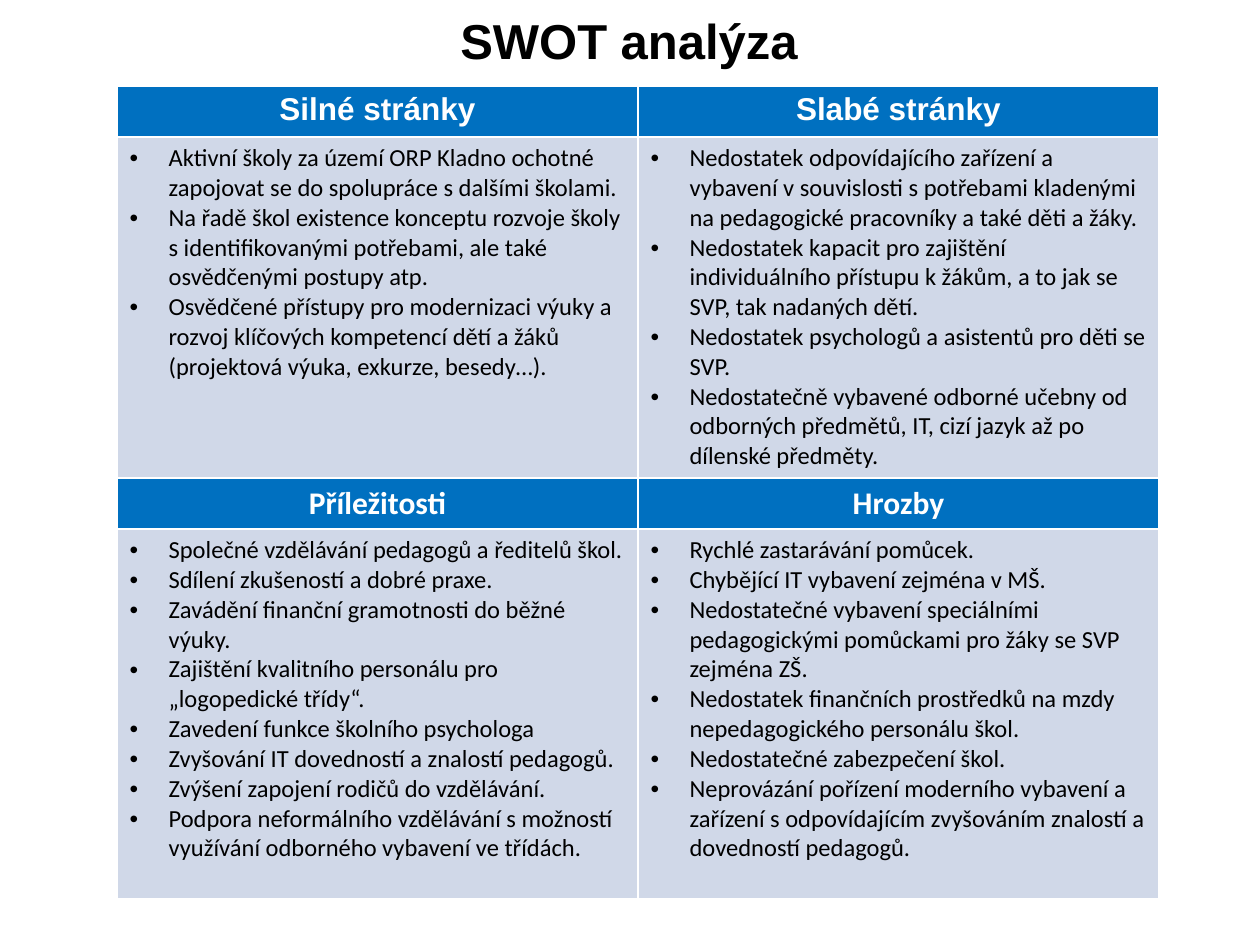
"""Builds the SWOT analysis slide."""
from dataclasses import dataclass

from lxml import etree
from pptx import Presentation
from pptx import util as u
from pptx.dml.color import RGBColor
from pptx.enum import text
from pptx.oxml import ns

SCALE = 914400 / 126


def px(size):
    return u.Emu(round(size * SCALE))


@dataclass(frozen=True)
class Theme:
    blue: str = "0070C0"
    pale: str = "D0D8E8"
    white: str = "FFFFFF"
    black: str = "000000"
    sans: str = "Arial"
    body: str = "Calibri"
    title: int = 28
    head: int = 18
    item: int = 14
    indent: int = 39


class Deck:
    def __init__(self, theme):
        self.theme = theme
        self.file = Presentation()
        self.file.slide_width, self.file.slide_height = px(1260), px(945)
        self.slide = self.file.slides.add_slide(self.file.slide_layouts[5])

    def style(self, para, face, size, color, bold):
        font = para.font
        font.name, font.size, font.bold = face, u.Pt(size), bold
        font.color.rgb = RGBColor.from_string(color)

    def title(self, words, left, top, width, height):
        shape = self.slide.shapes.title
        shape.left, shape.top = px(left), px(top)
        shape.width, shape.height = px(width), px(height)
        frame = shape.text_frame
        frame.text = words
        frame.auto_size = text.MSO_AUTO_SIZE.NONE
        frame.vertical_anchor = text.MSO_ANCHOR.TOP
        frame.margin_top = px(10)
        para = frame.paragraphs[0]
        para.alignment = text.PP_ALIGN.CENTER
        self.style(para, self.theme.sans, self.theme.title, self.theme.black, True)

    def table(self, left, top, width, heights):
        grid = self.slide.shapes.add_table(
            len(heights), 2, px(left), px(top), px(width), px(sum(heights))).table
        grid.horz_banding = False
        for row, height in zip(grid.rows, heights):
            row.height = px(height)
        return grid

    def fill(self, cell, color):
        cell.fill.solid()
        cell.fill.fore_color.rgb = RGBColor.from_string(color)

    def head(self, cell, words, face):
        self.fill(cell, self.theme.blue)
        cell.text = words
        para = cell.text_frame.paragraphs[0]
        para.alignment = text.PP_ALIGN.CENTER
        self.style(para, face, self.theme.head, self.theme.white, True)

    def items(self, cell, lines):
        self.fill(cell, self.theme.pale)
        cell.text = "\n".join(lines)
        for para in cell.text_frame.paragraphs:
            self.bullet(para)
            self.style(para, self.theme.body, self.theme.item, self.theme.black, False)

    def bullet(self, para):
        props = para._p.get_or_add_pPr()
        props.set("marL", str(px(self.theme.indent)))
        props.set("indent", str(-px(self.theme.indent)))
        etree.SubElement(props, ns.qn("a:buFont")).set("typeface", self.theme.sans)
        etree.SubElement(props, ns.qn("a:buChar")).set("char", "•")


STRONG = [
    "Aktivní školy za území ORP Kladno ochotné zapojovat se do spolupráce s dalšími školami.",
    "Na řadě škol existence konceptu rozvoje školy s identifikovanými potřebami, "
    "ale také osvědčenými postupy atp.",
    "Osvědčené přístupy pro modernizaci výuky a rozvoj klíčových kompetencí dětí a žáků "
    "(projektová výuka, exkurze, besedy…).",
]
WEAK = [
    "Nedostatek odpovídajícího zařízení a vybavení v souvislosti s potřebami kladenými "
    "na pedagogické pracovníky a také děti a žáky.",
    "Nedostatek kapacit pro zajištění individuálního přístupu k žákům, a to jak se SVP, "
    "tak nadaných dětí.",
    "Nedostatek psychologů a asistentů pro děti se SVP.",
    "Nedostatečně vybavené odborné učebny od odborných předmětů, IT, cizí jazyk až po "
    "dílenské předměty.",
]
CHANCES = [
    "Společné vzdělávání pedagogů a ředitelů škol.",
    "Sdílení zkušeností a dobré praxe.",
    "Zavádění finanční gramotnosti do běžné výuky.",
    "Zajištění kvalitního personálu pro „logopedické třídy“.",
    "Zavedení funkce školního psychologa",
    "Zvyšování IT dovedností a znalostí pedagogů.",
    "Zvýšení zapojení rodičů do vzdělávání.",
    "Podpora neformálního vzdělávání s možností využívání odborného vybavení ve třídách.",
]
THREATS = [
    "Rychlé zastarávání pomůcek.",
    "Chybějící IT vybavení zejména v MŠ.",
    "Nedostatečné vybavení speciálními pedagogickými pomůckami pro žáky se SVP zejména ZŠ.",
    "Nedostatek finančních prostředků na mzdy nepedagogického personálu škol.",
    "Nedostatečné zabezpečení škol.",
    "Neprovázání pořízení moderního vybavení a zařízení s odpovídajícím zvyšováním "
    "znalostí a dovedností pedagogů.",
]


def main():
    theme = Theme()
    deck = Deck(theme)
    deck.title("SWOT analýza", 62, 0, 1134, 108)
    grid = deck.table(117, 86, 1042, [51, 341, 51, 370])
    bands = [
        (theme.sans, [("Silné stránky", STRONG), ("Slabé stránky", WEAK)]),
        (theme.body, [("Příležitosti", CHANCES), ("Hrozby", THREATS)]),
    ]
    for band, (face, parts) in enumerate(bands):
        for col, (name, lines) in enumerate(parts):
            deck.head(grid.cell(2 * band, col), name, face)
            deck.items(grid.cell(2 * band + 1, col), lines)
    deck.file.save("out.pptx")


if __name__ == "__main__":
    main()
